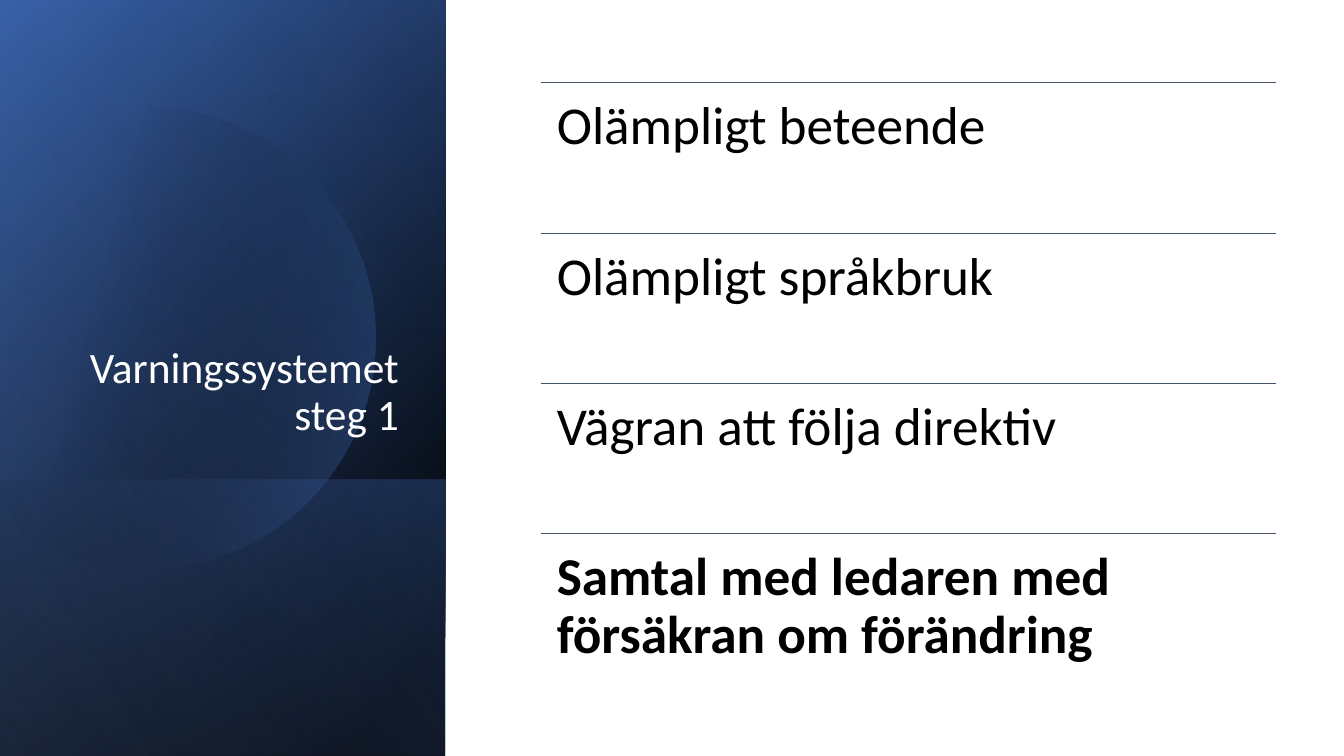
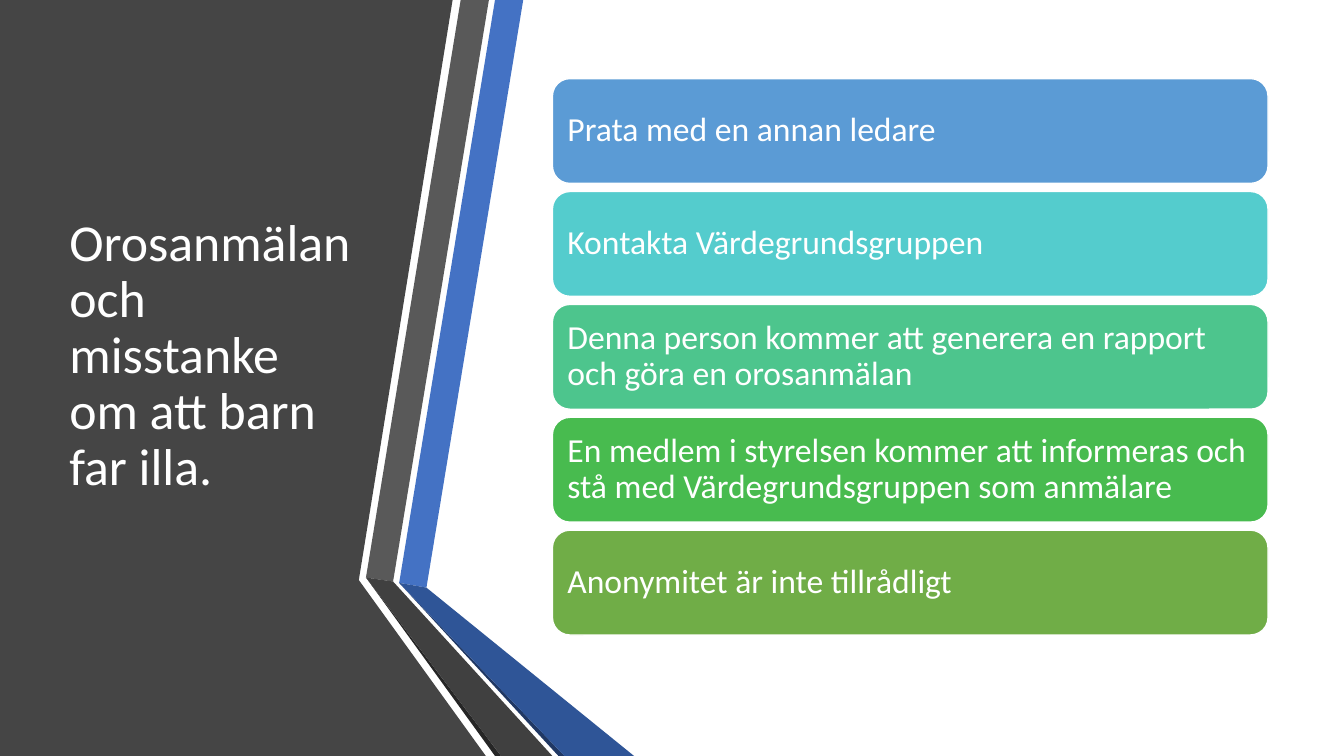
from dataclasses import dataclass
from math import acos, cos, sin

from lxml.etree import SubElement
from pptx import Presentation
from pptx.dml.color import RGBColor
from pptx.enum.shapes import MSO_CONNECTOR as CONN, MSO_SHAPE as SHAPE
from pptx.enum.text import MSO_ANCHOR as ANCHOR, PP_ALIGN as ALIGN
from pptx.oxml.ns import qn
from pptx.util import Inches, Pt


@dataclass(frozen=True)
class Theme:
    """Colours, font and type sizes shared by the slides."""
    font: str = "Calibri"
    white: str = "FFFFFF"
    black: str = "000000"
    blue: str = "4472C4"
    deep_blue: str = "2F5597"
    pale_blue: str = "8FAADC"
    navy: str = "203864"
    rule: str = "44546A"
    sidebar: str = "454545"
    greys: tuple = ("595959", "262626", "404040")
    steps: tuple = ("5B9BD5", "54CCCD", "4DC58D", "48BB4F", "70AD47")
    title_right: int = 31
    title_left: int = 37
    row_size: int = 38
    step_size: int = 24


@dataclass(frozen=True)
class Box:
    """A rectangle on the slide, in EMU."""
    x: int
    y: int
    w: int
    h: int

    def point(self, x, y):
        """Return the position at the given percentages of the box."""
        return round(self.x + self.w * x / 100), round(self.y + self.h * y / 100)

    def area(self, x, y, w, h):
        """Return an inner box given in percentages of this one."""
        return Box(*self.point(x, y), round(self.w * w / 100), round(self.h * h / 100))

    def rows(self, count, gap=0):
        """Split the box into equal rows, with a gap in percent of its height."""
        height = (100 - gap * (count - 1)) / count
        return [self.area(0, i * (height + gap), 100, height) for i in range(count)]

    def frame(self):
        """Return left, top, width and height."""
        return self.x, self.y, self.w, self.h


T = Theme()
PAGE = Box(0, 0, Inches(13.33), Inches(7.5))


def rgb(value):
    """Turn a hex string into a colour."""
    return RGBColor.from_string(value)


def plain(sp, color=None):
    """Remove shadow and outline and apply a solid fill, or none."""
    sp.shadow.inherit = False
    sp.line.fill.background()
    if color:
        sp.fill.solid()
        sp.fill.fore_color.rgb = rgb(color)
    else:
        sp.fill.background()
    return sp


def gradient(sp, angle, *stops):
    """Fill a shape with a linear gradient of (position, colour, opacity) stops."""
    props = plain(sp)._element.spPr
    fill = SubElement(props, qn("a:gradFill"), rotWithShape="1")
    stop_list = SubElement(fill, qn("a:gsLst"))
    for pos, color, opacity in stops:
        stop = SubElement(stop_list, qn("a:gs"), pos=str(pos * 1000))
        clr = SubElement(stop, qn("a:srgbClr"), val=color)
        SubElement(clr, qn("a:alpha"), val=str(opacity * 1000))
    SubElement(fill, qn("a:lin"), ang=str(angle * 60000), scaled="0")
    props.replace(props.find(qn("a:noFill")), fill)


def write(sp, text, size, color, anchor=ANCHOR.TOP, align=ALIGN.LEFT, inset=0.1, bold=False):
    """Set and format the text of a shape."""
    tf = sp.text_frame
    tf.text = text
    tf.word_wrap = True
    tf.vertical_anchor = anchor
    tf.margin_left = tf.margin_right = Inches(inset)
    tf.margin_top = tf.margin_bottom = Inches(inset)
    p = tf.paragraphs[0]
    p.alignment = align
    p.line_spacing = 0.9
    font = p.runs[0].font
    font.name, font.size, font.bold = T.font, Pt(size), bold
    font.color.rgb = rgb(color)


def polygon(s, points):
    """Draw a closed outline through absolute points."""
    builder = s.shapes.build_freeform(*points[0])
    builder.add_line_segments(points[1:], close=True)
    return builder.convert_to_shape()


def turned_panel(s, box, angle, *stops):
    """Cover a box with a mirrored gradient rectangle turned by 90 degrees."""
    shift = (box.w - box.h) // 2
    sp = s.shapes.add_shape(SHAPE.RECTANGLE, box.x + shift, box.y - shift, box.h, box.w)
    sp.rotation = 90
    sp._element.spPr.find(qn("a:xfrm")).set("flipH", "1")
    gradient(sp, angle, *stops)


def clipped_disc(s, box):
    """Draw a translucent disc cut off at the left edge of the box."""
    cx, cy = box.point(32.58, 44.67)
    r = box.h * 0.305
    limit = acos((box.x - cx) / r)
    angles = [limit * (i / 60 - 1) for i in range(121)]
    sp = polygon(s, [(round(cx + r * cos(a)), round(cy + r * sin(a))) for a in angles])
    gradient(sp, 14, (29, T.black, 0), (100, T.blue, 43))


def gradient_sidebar(s, box, title):
    """Build the layered blue sidebar with a right-aligned title."""
    turned_panel(s, box, 50, (8, T.black, 100), (100, T.deep_blue, 100))
    turned_panel(s, box, 30, (0, T.black, 0), (99, T.blue, 46))
    turned_panel(s, box.area(0, 63.47, 100, 36.53), 130, (2, T.blue, 29), (100, T.black, 30))
    clipped_disc(s, box)
    turned_panel(s, box, 120, (0, T.black, 0), (99, T.pale_blue, 11))
    tb = s.shapes.add_textbox(*box.area(14.5, 24.5, 77.2, 35).frame())
    write(tb, title, T.title_right, T.white, ANCHOR.BOTTOM, ALIGN.RIGHT)


def ruled_list(s, box, texts):
    """Stack rows under thin rules, the last row in bold."""
    for row, text in zip(box.rows(len(texts)), texts):
        line = s.shapes.add_connector(CONN.STRAIGHT, *row.point(0, 0), *row.point(100, 0))
        line.line.color.rgb = rgb(T.rule)
        line.line.width = Pt(0.5)
        SubElement(line._element.spPr, qn("a:effectLst"))
        tb = s.shapes.add_textbox(*row.frame())
        write(tb, text, T.row_size, T.black, inset=0.16, bold=text == texts[-1])


def bent_stripe(s, box, top, elbow, foot, colors):
    """Draw a stripe bent at an elbow, with a thin shade along its lower leg."""
    inner, outer = elbow
    shade, left, right = [(x, 100) for x in foot]
    outlines = (
        [(top[0], 0), (top[1], 0), outer, inner],
        [inner, shade, left],
        [inner, left, right, outer],
    )
    for outline, color in zip(outlines, colors):
        plain(polygon(s, [box.point(*xy) for xy in outline]), color)


def arrow_sidebar(s, box, title):
    """Build the dark sidebar with its two bent stripes and a title."""
    edge = [(0, 0), (33.68, 0), (26.7, 76.73), (36.15, 100), (0, 100)]
    plain(polygon(s, [box.point(*xy) for xy in edge]), T.sidebar)
    bent_stripe(s, box, (36.83, 38.93), ((29.7, 77.1), (31.73, 77.73)),
                (41.55, 42, 47.18), (T.blue, T.navy, T.deep_blue))
    bent_stripe(s, box, (34.28, 36.38), ((27.23, 76.4), (29.25, 76.93)),
                (36.83, 37.28, 41.1), T.greys)
    tb = s.shapes.add_textbox(*box.area(4.43, 10, 22.8, 74.4).frame())
    write(tb, title, T.title_left, T.white, ANCHOR.MIDDLE)


def step_list(s, box, texts):
    """Stack rounded coloured bars, one for each step."""
    for row, text, color in zip(box.rows(len(texts), 1.45), texts, T.steps):
        sp = plain(s.shapes.add_shape(SHAPE.ROUNDED_RECTANGLE, *row.frame()), color)
        sp.line.color.rgb = rgb(T.white)
        sp.line.width = Pt(1)
        write(sp, text, T.step_size, T.white, ANCHOR.MIDDLE)


def main():
    """Build and save the presentation."""
    prs = Presentation()
    prs.slide_width, prs.slide_height = PAGE.w, PAGE.h
    blank = prs.slide_layouts[6]

    s = prs.slides.add_slide(blank)
    gradient_sidebar(s, PAGE.area(0, 0, 33.15, 100), "Varningssystemet steg 1")
    ruled_list(s, PAGE.area(40.23, 10.93, 54.7, 79.55), (
        "Olämpligt beteende",
        "Olämpligt språkbruk",
        "Vägran att följa direktiv",
        "Samtal med ledaren med försäkran om förändring",
    ))

    s = prs.slides.add_slide(blank)
    arrow_sidebar(s, PAGE, "Orosanmälan och misstanke om att barn far illa.")
    step_list(s, PAGE.area(41.1, 10.4, 53.25, 73.6), (
        "Prata med en annan ledare",
        "Kontakta Värdegrundsgruppen",
        "Denna person kommer att generera en rapport och göra en orosanmälan",
        "En medlem i styrelsen kommer att informeras och stå med Värdegrundsgruppen som anmälare",
        "Anonymitet är inte tillrådligt",
    ))

    prs.save("out.pptx")


if __name__ == "__main__":
    main()
